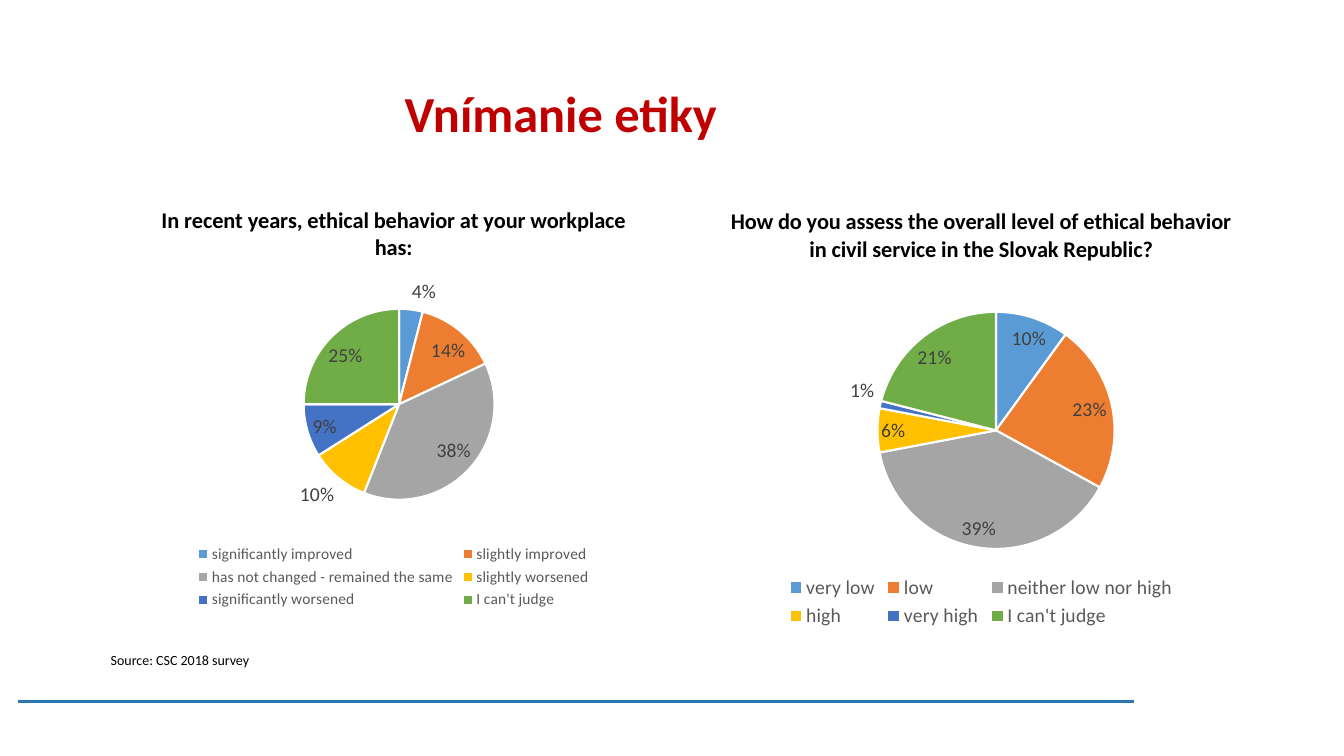
from dataclasses import dataclass

from lxml import etree
from pptx import Presentation
from pptx.chart.data import CategoryChartData
from pptx.dml.color import RGBColor
from pptx.enum.chart import XL_CHART_TYPE, XL_LABEL_POSITION as LabelPos, XL_LEGEND_POSITION as LegendPos
from pptx.enum.shapes import MSO_CONNECTOR
from pptx.enum.text import MSO_ANCHOR
from pptx.oxml import parse_xml
from pptx.oxml.ns import nsdecls, qn
from pptx.util import Pt

PX = 9525  # EMU per px; the slide is 1280 by 720 px


@dataclass(frozen=True)
class Theme:
    font: str = "Calibri"
    title: str = "C00000"
    rule: str = "2E75B6"
    ink: str = "000000"
    label: str = "404040"
    legend: str = "595959"
    white: str = "FFFFFF"
    slices: tuple = ("5B9BD5", "ED7D31", "A5A5A5", "FFC000", "4472C4", "70AD47")
    title_size: int = 36
    heading_size: int = 16
    label_size: int = 14
    source_size: int = 10


THEME = Theme()

WORKPLACE = {
    "heading": "In recent years, ethical behavior at your workplace has:",
    "shares": {
        "significantly improved": 4,
        "slightly improved": 14,
        "has not changed - remained the same": 38,
        "slightly worsened": 10,
        "significantly worsened": 9,
        "I can't judge": 25,
    },
    "legend_size": 11,
    "pie": (216, 116, 182),
}
CIVIL_SERVICE = {
    "heading": "How do you assess the overall level of ethical behavior "
               "in civil service in the Slovak Republic?",
    "shares": {
        "very low": 10,
        "low": 23,
        "neither low nor high": 39,
        "high": 6,
        "very high": 1,
        "I can't judge": 21,
    },
    "legend_size": 14,
    "pie": (216, 118, 226),
}


def emu(box):
    return [length * PX for length in box]


def style_font(font, size, color, bold=False):
    for attribute, value in {"name": THEME.font, "size": Pt(size), "bold": bold}.items():
        setattr(font, attribute, value)
    font.color.rgb = RGBColor.from_string(color)


def add_text(slide, box, words, size, color, bold=False, wrap=True):
    frame = slide.shapes.add_textbox(*emu(box)).text_frame
    frame.word_wrap = wrap
    frame.vertical_anchor = MSO_ANCHOR.MIDDLE
    line = frame.paragraphs[0].add_run()
    line.text = words
    style_font(line.font, size, color, bold)


def place_pie(chart, box, pie):
    """Fix the pie's (left, top, diameter), in px from the chart's corner."""
    left, top, diameter = pie
    width, height = box[2:]
    fractions = {"x": left / width, "y": top / height,
                 "w": diameter / width, "h": diameter / height}
    parts = '<c:layoutTarget val="inner"/><c:xMode val="edge"/><c:yMode val="edge"/>'
    parts += "".join(f'<c:{side} val="{share:.3f}"/>' for side, share in fractions.items())
    plot_area = chart.plots[0]._element.getparent()
    for layout in plot_area.findall(qn("c:layout")):
        plot_area.remove(layout)
    plot_area.insert(0, parse_xml(
        f'<c:layout {nsdecls("c")}><c:manualLayout>{parts}</c:manualLayout></c:layout>'))


def add_survey_pie(slide, box, survey):
    shares = CategoryChartData()
    shares.categories = list(survey["shares"])
    shares.add_series("Series 1", list(survey["shares"].values()))
    chart = slide.shapes.add_chart(XL_CHART_TYPE.PIE, *emu(box), shares).chart
    style_font(chart.font, THEME.source_size, THEME.ink)

    heading = chart.chart_title.text_frame
    heading.text = survey["heading"]
    style_font(heading.paragraphs[0].runs[0].font, THEME.heading_size, THEME.ink, bold=True)

    chart.has_legend = True
    for attribute, value in {"position": LegendPos.BOTTOM, "include_in_layout": False}.items():
        setattr(chart.legend, attribute, value)
    style_font(chart.legend.font, survey["legend_size"], THEME.legend)

    plot = chart.plots[0]
    plot.vary_by_categories = True
    for index, color in enumerate(THEME.slices):
        piece = plot.series[0].points[index].format
        piece.fill.solid()
        piece.fill.fore_color.rgb = RGBColor.from_string(color)
        piece.line.color.rgb = RGBColor.from_string(THEME.white)
        piece.line.width = Pt(1.5)

    plot.has_data_labels = True
    label_format = {"show_percentage": True, "show_value": False, "number_format": "0%",
                    "number_format_is_linked": False, "position": LabelPos.BEST_FIT}
    for attribute, value in label_format.items():
        setattr(plot.data_labels, attribute, value)
    style_font(plot.data_labels.font, THEME.label_size, THEME.label)
    place_pie(chart, box, survey["pie"])


def add_footer_rule(slide, left, right, y):
    rule = slide.shapes.add_connector(MSO_CONNECTOR.STRAIGHT, *emu((left, y, right, y)))
    rule.line.color.rgb = RGBColor.from_string(THEME.rule)
    rule.line.width = Pt(1.75)
    etree.SubElement(rule._element.spPr, qn("a:effectLst"))


def build_ethics_slide(slide):
    add_footer_rule(slide, 17, 1080, 668)
    add_text(slide, (376, 38, 816, 139), "Vnímanie etiky",
             THEME.title_size, THEME.title, bold=True)
    add_survey_pie(slide, (73, 178, 604, 406), WORKPLACE)
    add_survey_pie(slide, (620, 179, 629, 423), CIVIL_SERVICE)
    add_text(slide, (96, 616, 154, 26), "Source: CSC 2018 survey",
             THEME.source_size, THEME.ink, wrap=False)


def main():
    deck = Presentation()
    deck.slide_width, deck.slide_height = emu((1280, 720))
    build_ethics_slide(deck.slides.add_slide(deck.slide_layouts[6]))
    deck.save("out.pptx")


if __name__ == "__main__":
    main()
